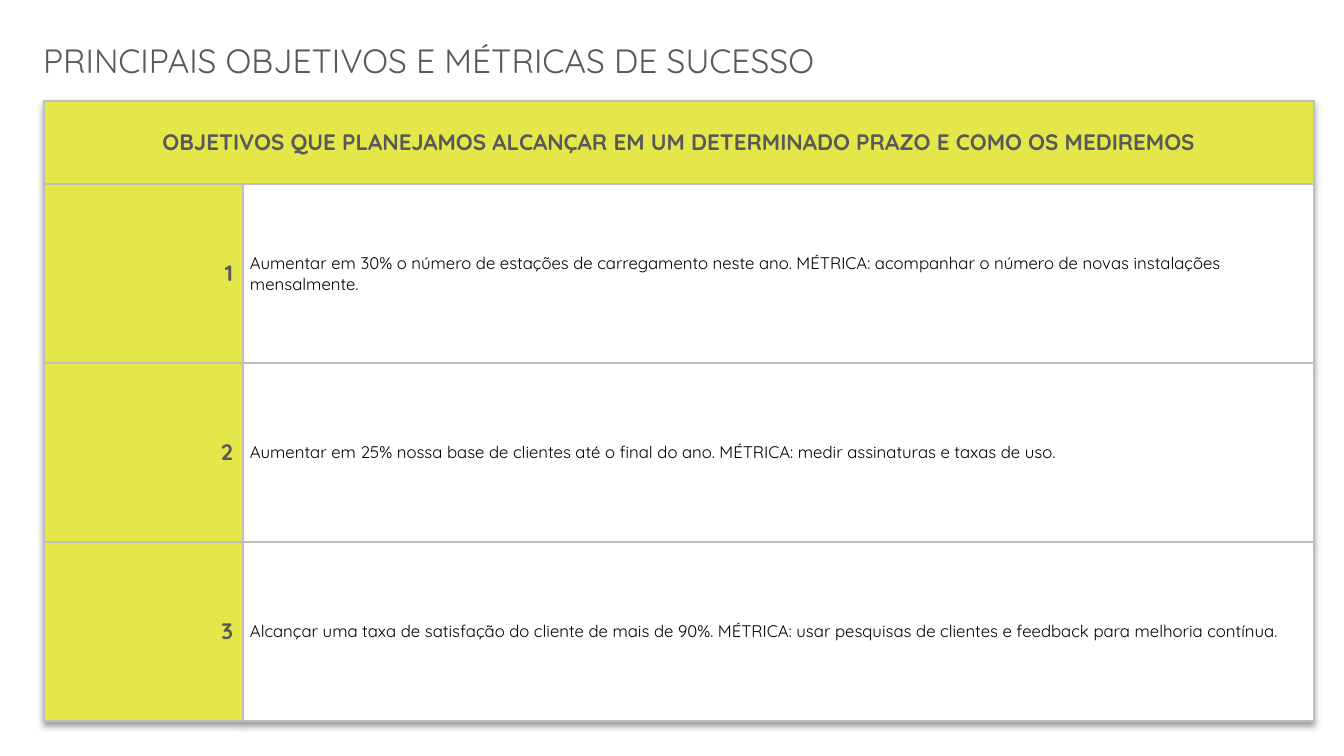
import lxml.etree
import pptx
import pptx.dml.color
import pptx.enum.text
import pptx.oxml
import pptx.oxml.ns
import pptx.util

EMU_PER_PX = 914400 / 100.8
FONT = "Quicksand"
LIME = pptx.dml.color.RGBColor(0xE3, 0xE7, 0x49)
WHITE = pptx.dml.color.RGBColor(0xFF, 0xFF, 0xFF)
BLACK = pptx.dml.color.RGBColor(0, 0, 0)
GREY = pptx.dml.color.RGBColor(0x59, 0x59, 0x59)
BORDER = pptx.dml.color.RGBColor(0xBF, 0xBF, 0xBF)
ALIGN = pptx.enum.text.PP_ALIGN
ANCHOR = pptx.enum.text.MSO_ANCHOR

HEADING = "OBJETIVOS QUE PLANEJAMOS ALCANÇAR EM UM DETERMINADO PRAZO E COMO OS MEDIREMOS"
GOALS = [
    "Aumentar em 30% o número de estações de carregamento neste ano. "
    "MÉTRICA: acompanhar o número de novas instalações mensalmente.",
    "Aumentar em 25% nossa base de clientes até o final do ano. "
    "MÉTRICA: medir assinaturas e taxas de uso.",
    "Alcançar uma taxa de satisfação do cliente de mais de 90%. "
    "MÉTRICA: usar pesquisas de clientes e feedback para melhoria contínua.",
]
COLUMN_WIDTHS = [199, 1071]
ROW_HEIGHTS = [83] + [179] * len(GOALS)


def px(length):
    return pptx.util.Emu(round(length * EMU_PER_PX))


def style_cell(cell, text, fill, size, color, bold, alignment):
    """Write the text and give the cell its fill, font and four borders."""
    cell.text = text
    cell.vertical_anchor = ANCHOR.MIDDLE
    cell.fill.solid()
    cell.fill.fore_color.rgb = fill
    paragraph = cell.text_frame.paragraphs[0]
    paragraph.alignment = alignment
    paragraph.font.name = FONT
    paragraph.font.size = pptx.util.Pt(size)
    paragraph.font.bold = bold
    paragraph.font.color.rgb = color
    properties = cell._tc.get_or_add_tcPr()
    for position, side in enumerate(("lnL", "lnR", "lnT", "lnB")):
        properties.insert(position, pptx.oxml.parse_xml(
            f'<a:{side} {pptx.oxml.ns.nsdecls("a")} w="12700"><a:solidFill>'
            f'<a:srgbClr val="{BORDER}"/></a:solidFill></a:{side}>'))


presentation = pptx.Presentation()
presentation.slide_width = px(1344)
presentation.slide_height = px(756)
slide = presentation.slides.add_slide(presentation.slide_layouts[5])

title = slide.shapes.title
title.left, title.top, title.width, title.height = px(33), px(35), px(815), px(50)
title.text = "PRINCIPAIS OBJETIVOS E MÉTRICAS DE SUCESSO"
title.text_frame.word_wrap = True
title.text_frame.vertical_anchor = ANCHOR.TOP
title.text_frame.auto_size = pptx.enum.text.MSO_AUTO_SIZE.SHAPE_TO_FIT_TEXT
title_paragraph = title.text_frame.paragraphs[0]
title_paragraph.alignment = ALIGN.LEFT
title_paragraph.font.name = FONT
title_paragraph.font.size = pptx.util.Pt(24)
title_paragraph.font.color.rgb = GREY

table = slide.shapes.add_table(
    len(ROW_HEIGHTS), len(COLUMN_WIDTHS), px(44), px(101),
    px(sum(COLUMN_WIDTHS)), px(sum(ROW_HEIGHTS))).table
table.horz_banding = False
table.first_row = False
for column, width in zip(table.columns, COLUMN_WIDTHS):
    column.width = px(width)
for row, height in zip(table.rows, ROW_HEIGHTS):
    row.height = px(height)

table._tbl.tblPr.insert(0, pptx.oxml.parse_xml(
    f'<a:effectLst {pptx.oxml.ns.nsdecls("a")}>'
    '<a:outerShdw blurRad="50800" dist="38100" dir="5400000" algn="t" rotWithShape="0">'
    '<a:srgbClr val="000000"><a:alpha val="40000"/></a:srgbClr>'
    '</a:outerShdw></a:effectLst>'))

table.cell(0, 0).merge(table.cell(0, 1))
style_cell(table.cell(0, 0), HEADING, LIME, 16, GREY, True, ALIGN.CENTER)
style_cell(table.cell(0, 1), "", LIME, 16, GREY, True, ALIGN.CENTER)
for number, goal in enumerate(GOALS, start=1):
    style_cell(table.cell(number, 0), str(number), LIME, 16, GREY, True, ALIGN.RIGHT)
    goal_cell = table.cell(number, 1)
    style_cell(goal_cell, goal, WHITE, 12, BLACK, False, ALIGN.LEFT)
    goal_cell.margin_left = goal_cell.margin_right = px(7)
    goal_cell.margin_top = goal_cell.margin_bottom = 0

presentation.save("out.pptx")
